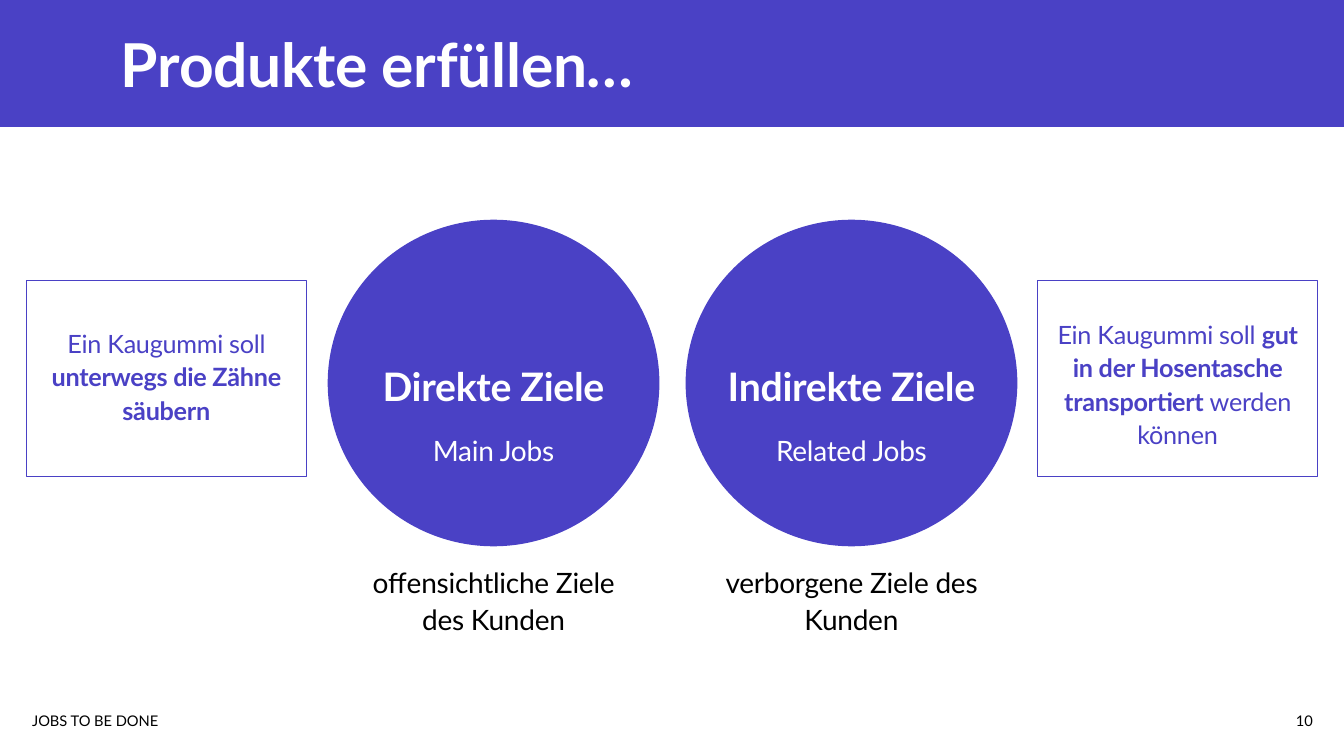
from pptx import Presentation
from pptx.dml.color import RGBColor
from pptx.enum.shapes import MSO_SHAPE
from pptx.enum.text import MSO_ANCHOR, MSO_AUTO_SIZE, PP_ALIGN
from pptx.util import Inches, Pt

VIOLET = RGBColor(0x4A, 0x41, 0xC5)
WHITE = RGBColor(0xFF, 0xFF, 0xFF)
BLACK = RGBColor(0, 0, 0)
FONT = "Lato"
SLIDE_WIDTH, SLIDE_HEIGHT = 13.33, 7.5
CIRCLE_WIDTH, CIRCLE_HEIGHT = 3.29, 3.24
EXAMPLE_WIDTH, EXAMPLE_HEIGHT = 2.78, 1.95


def place(shape, left, top, width, height):
    """Move and size a shape, in inches."""
    shape.left, shape.top = Inches(left), Inches(top)
    shape.width, shape.height = Inches(width), Inches(height)


def write_text(shape, runs, size, color, align=PP_ALIGN.CENTER, anchor=MSO_ANCHOR.TOP,
               line_spacing=1.1, space_before=10, tracking=-20):
    """Fill a shape with one paragraph of (text, bold) runs."""
    frame = shape.text_frame
    frame.word_wrap = True
    frame.auto_size = MSO_AUTO_SIZE.NONE
    frame.vertical_anchor = anchor
    paragraph = frame.paragraphs[0]
    paragraph.alignment = align
    paragraph.line_spacing = line_spacing
    paragraph.space_before = Pt(space_before)
    for text, bold in runs:
        run = paragraph.add_run()
        run.text = text
        run.font.name = FONT
        run.font.size = Pt(size)
        run.font.bold = bold
        run.font.color.rgb = color
        run._r.get_or_add_rPr().set("spc", str(tracking))


def add_text(slide, box, runs, size, color, **text_format):
    """Add a text box with formatted runs."""
    text_box = slide.shapes.add_textbox(*map(Inches, box))
    write_text(text_box, runs, size, color, **text_format)


def add_panel(slide, kind, box, fill=None, line=None):
    """Add a flat preset shape with an optional fill and outline."""
    panel = slide.shapes.add_shape(kind, *map(Inches, box))
    panel.shadow.inherit = False
    if fill is None:
        panel.fill.background()
    else:
        panel.fill.solid()
        panel.fill.fore_color.rgb = fill
    if line is None:
        panel.line.fill.background()
    else:
        panel.line.color.rgb = line
        panel.line.width = Pt(1)
    return panel


def add_header(slide, height, title_text):
    """Draw the band across the top with the title on it."""
    band = add_panel(slide, MSO_SHAPE.RECTANGLE, (0, 0, SLIDE_WIDTH, height), fill=VIOLET)
    title = slide.shapes.title
    title._element.addprevious(band._element)
    place(title, 1.1, (height - 0.84) / 2, 10.3, 0.84)
    write_text(title, [(title_text, True)], 43.2, WHITE, align=PP_ALIGN.LEFT,
               anchor=MSO_ANCHOR.MIDDLE, line_spacing=1.0, space_before=0)


def add_footer(slide, top, name, number):
    """Place the deck name on the left and the page number on the right."""
    for left, width, text, align in ((0.22, 5.29, name, PP_ALIGN.LEFT),
                                     (12.43, 0.69, number, PP_ALIGN.RIGHT)):
        add_text(slide, (left, top, width, 0.4), [(text, False)], 10.5, BLACK, align=align,
                 anchor=MSO_ANCHOR.MIDDLE, line_spacing=1.0, space_before=0, tracking=0)


def add_goal(slide, left, top, heading, jobs, caption):
    """Draw a goal circle with its heading, job type and caption below."""
    add_panel(slide, MSO_SHAPE.OVAL, (left, top, CIRCLE_WIDTH, CIRCLE_HEIGHT), fill=VIOLET)
    lines = ((heading, 1.32, 2.98, 0.59, 28, WHITE, True),
             (jobs, 2.04, 1.86, 0.41, 20, WHITE, False),
             (caption, 3.35, 2.76, 0.84, 20, BLACK, False))
    for text, offset, width, height, size, color, bold in lines:
        box = (left + (CIRCLE_WIDTH - width) / 2, top + offset, width, height)
        add_text(slide, box, [(text, bold)], size, color)


def add_example(slide, left, top, text_offset, text_height, runs):
    """Draw an outlined example with its text inside."""
    add_text(slide, (left, top + text_offset, EXAMPLE_WIDTH, text_height), runs, 18, VIOLET)
    add_panel(slide, MSO_SHAPE.RECTANGLE, (left, top, EXAMPLE_WIDTH, EXAMPLE_HEIGHT), line=VIOLET)


def main():
    """Build and save the slide."""
    presentation = Presentation()
    presentation.slide_width = Inches(SLIDE_WIDTH)
    presentation.slide_height = Inches(SLIDE_HEIGHT)
    slide = presentation.slides.add_slide(presentation.slide_layouts[5])
    add_header(slide, 1.26, "Produkte erfüllen…")
    add_footer(slide, 6.95, "JOBS TO BE DONE", "10")
    add_goal(slide, 3.25, 2.18, "Direkte Ziele", "Main Jobs",
             "offensichtliche Ziele des Kunden")
    add_goal(slide, 6.8, 2.18, "Indirekte Ziele", "Related Jobs",
             "verborgene Ziele des Kunden")
    add_example(slide, 10.29, 2.78, 0.31, 1.42,
                [("Ein Kaugummi soll ", False), ("gut in der Hosentasche transportiert ", True),
                 ("werden können", False)])
    add_example(slide, 0.26, 2.78, 0.4, 1.13,
                [("Ein Kaugummi soll ", False), ("unterwegs die Zähne säubern", True)])
    presentation.save("out.pptx")


if __name__ == "__main__":
    main()
